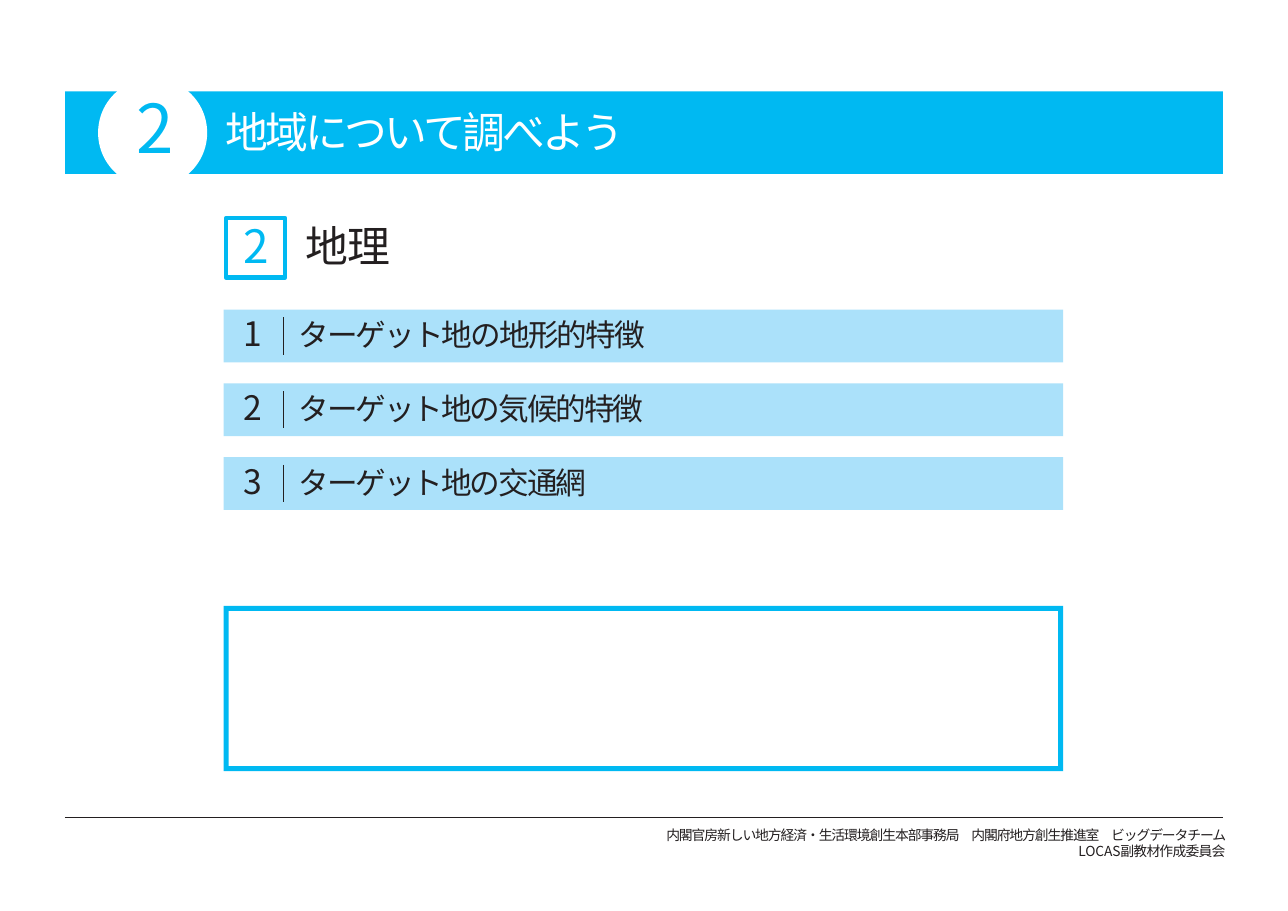
import pptx
import pptx.util
import pptx.dml.color
import pptx.enum.shapes
import pptx.enum.text
import pptx.oxml.ns
import lxml.etree

Inches = pptx.util.Inches
Pt = pptx.util.Pt
Shape = pptx.enum.shapes.MSO_SHAPE
Align = pptx.enum.text.PP_ALIGN
qn = pptx.oxml.ns.qn

FONT = "Noto Sans CJK JP"
BLUE = "00B9F2"
PALE = "ABE1FA"
INK = "231F20"
WHITE = "FFFFFF"


def color(code):
    return pptx.dml.color.RGBColor.from_string(code)


class Page:
    def __init__(self, slide, font):
        self.slide = slide
        self.font = font

    def shape(self, kind, x, y, w, h, fill=None, line=None, width=1):
        item = self.slide.shapes.add_shape(
            kind, Inches(x), Inches(y), Inches(w), Inches(h))
        item.shadow.inherit = False
        if fill:
            item.fill.solid()
            item.fill.fore_color.rgb = color(fill)
        else:
            item.fill.background()
        if line:
            item.line.color.rgb = color(line)
            item.line.width = Pt(width)
        else:
            item.line.fill.background()
        return item

    def rule(self, x1, y1, x2, y2, width):
        item = self.slide.shapes.add_connector(
            pptx.enum.shapes.MSO_CONNECTOR.STRAIGHT,
            Inches(x1), Inches(y1), Inches(x2), Inches(y2))
        item.line.color.rgb = color(INK)
        item.line.width = Pt(width)
        lxml.etree.SubElement(item._element.spPr, qn("a:effectLst"))

    def text(self, x, y, w, h, lines, size, code=INK, top=0.01, left=0.01,
             before=1, tab=None, align=Align.LEFT, pitch=None):
        box = self.slide.shapes.add_textbox(
            Inches(x), Inches(y), Inches(w), Inches(h))
        frame = box.text_frame
        frame.word_wrap = True
        frame.margin_left = frame.margin_right = frame.margin_bottom = 0
        frame.margin_top = Inches(top)
        for i, runs in enumerate(lines):
            para = frame.add_paragraph() if i else frame.paragraphs[0]
            para.alignment = align
            para.space_before = Pt(before)
            if pitch:
                para.line_spacing = Pt(pitch)
            props = para._p.get_or_add_pPr()
            props.set("marL", str(Inches(left)))
            props.set("indent", "0")
            if tab:
                tabs = lxml.etree.SubElement(props, qn("a:tabLst"))
                lxml.etree.SubElement(
                    tabs, qn("a:tab"), pos=str(Inches(tab)), algn="l")
            para.font.name = self.font
            para.font.size = Pt(size)
            para.font.color.rgb = color(code)
            lxml.etree.SubElement(
                props.find(qn("a:defRPr")), qn("a:ea"), typeface=self.font)
            for words, gap, *own in runs:
                run = para.add_run()
                run.text = words
                run._r.get_or_add_rPr().set("spc", str(round(gap * 100)))
                if own:
                    run.font.size = Pt(own[0])

    def topic(self, y, mark, label, gap):
        x, w, h = 2.03, 7.62, 0.48
        self.shape(Shape.RECTANGLE, x, y, w, h, PALE)
        self.text(x, y, w, h, [[(mark + "\t", -0.5), (label, gap, 20)]], 22,
                  top=0.03, left=0.18, before=2.1, tab=0.73)
        self.rule(2.57, y + 0.07, 2.57, y + 0.41, 0.75)


def main():
    deck = pptx.Presentation()
    deck.slide_width = Inches(11.69)
    deck.slide_height = Inches(8.27)
    page = Page(deck.slides.add_slide(deck.slide_layouts[6]), FONT)

    page.shape(Shape.RECTANGLE, 0.59, 0.83, 10.51, 0.75, BLUE)
    page.shape(Shape.OVAL, 0.89, 0.71, 0.99, 0.99, WHITE)
    page.text(1.18, 0.77, 0.39, 0.8, [[("2", 0)]], 44, BLUE, left=0.06)
    page.text(2.04, 0.95, 3.7, 0.49, [[("地域について調べよう", -2)]], 28, WHITE)

    page.shape(Shape.RECTANGLE, 2.05, 1.98, 0.54, 0.54, line=BLUE, width=2.64)
    page.text(2.2, 1.97, 0.24, 0.53, [[("2", 0)]], 30, BLUE)
    page.text(2.76, 1.98, 0.81, 0.49, [[("地理", -0.2)]], 28)

    topics = [("ターゲット地の地形的特徴", -1.3),
              ("ターゲット地の気候的特徴", -1.4),
              ("ターゲット地の交通網", -1.4)]
    for i, (label, gap) in enumerate(topics):
        page.topic(2.81 + 0.67 * i, str(i + 1), label, gap)

    frame = page.shape(Shape.FRAME, 2.03, 5.5, 7.62, 1.5, BLUE)
    frame.adjustments[0] = 0.03

    page.rule(0.59, 7.42, 11.1, 7.42, 0.5)
    page.text(5.82, 7.51, 5.3, 0.29, [
        [("内閣官房新しい地方経済・生活環境創生本部事務局　"
          "内閣府地方創生推進室　ビッグデータチーム", -0.7)],
        [("LOCAS", -0.1), ("副教材作成委員会", -0.5)],
    ], 9, top=0, before=0, align=Align.RIGHT, pitch=10.6)

    deck.save("out.pptx")


if __name__ == "__main__":
    main()
